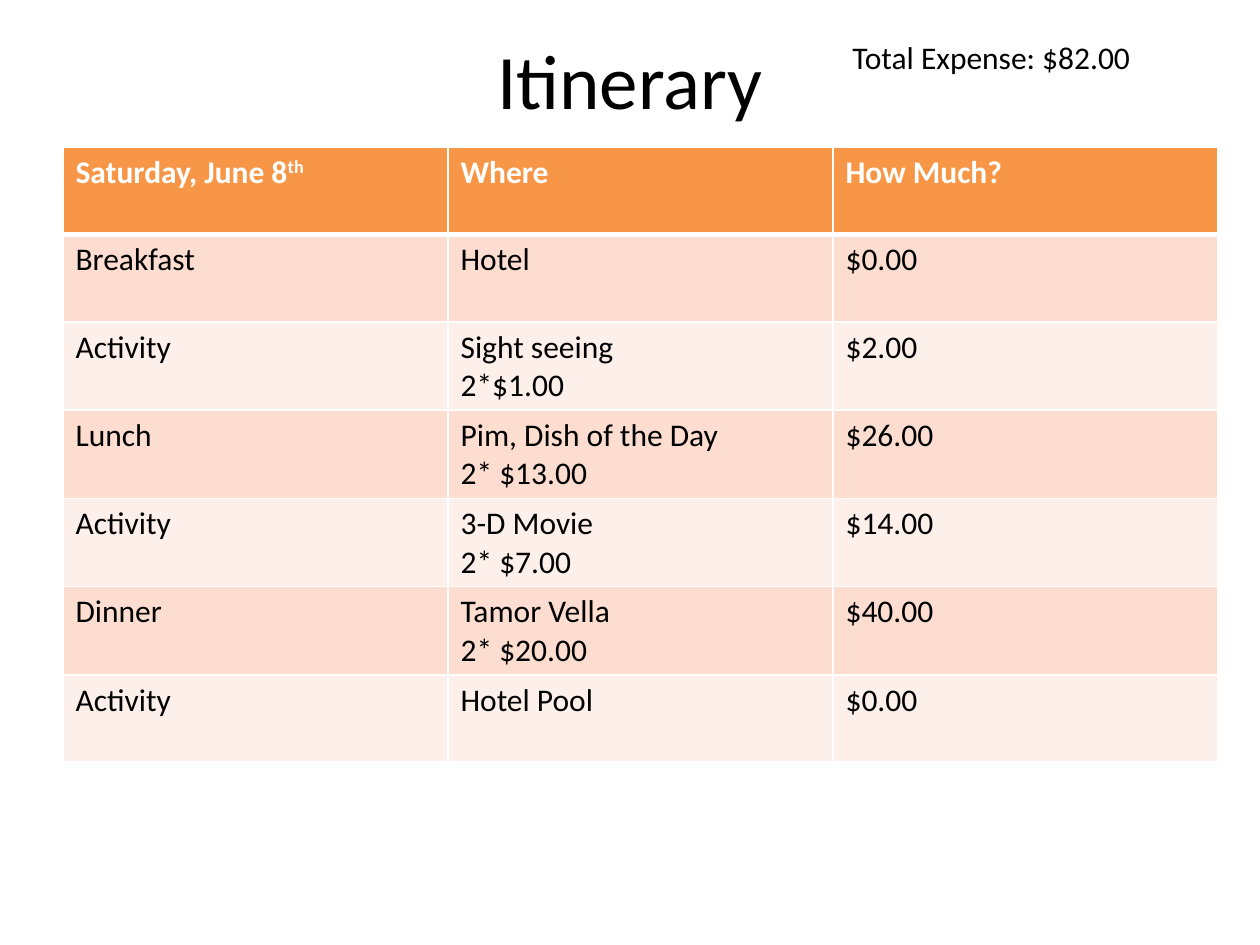
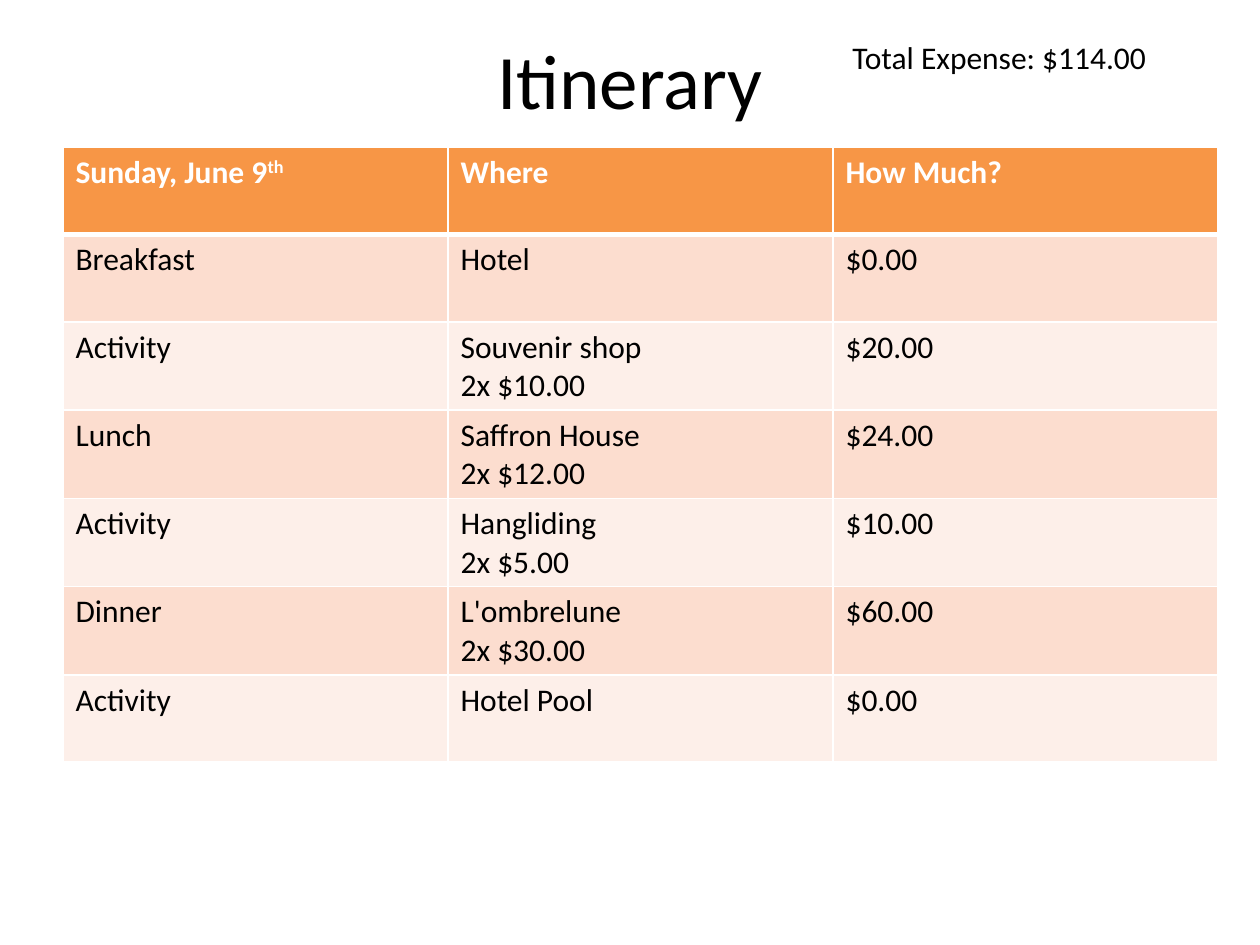
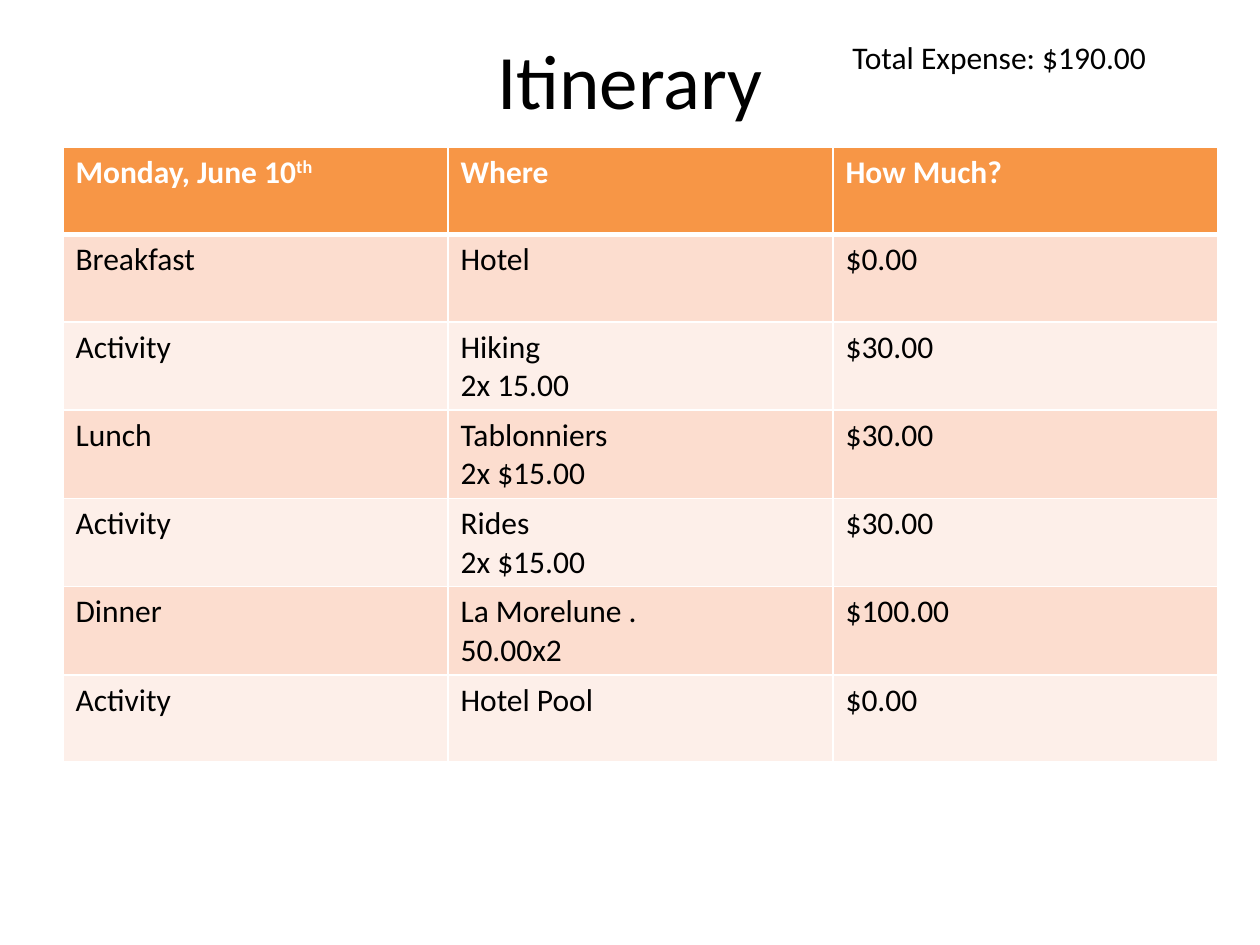
from collections import namedtuple

from lxml.etree import SubElement
from pptx import Presentation
from pptx.dml.color import RGBColor
from pptx.enum.text import MSO_ANCHOR, MSO_AUTO_SIZE, PP_ALIGN
from pptx.oxml.ns import qn
from pptx.util import Pt

EMU_PER_PX = 914400 / 126
FONT = "Calibri"
BLACK = RGBColor(0x00, 0x00, 0x00)
WHITE = RGBColor(0xFF, 0xFF, 0xFF)
ORANGE = RGBColor(0xF7, 0x96, 0x46)
PEACH = RGBColor(0xFC, 0xDD, 0xCF)
PALE_PEACH = RGBColor(0xFD, 0xEF, 0xE9)

Box = namedtuple("Box", "left top width height")
Day = namedtuple("Day", "date places costs")

HEADING_BOX = Box(63, 0, 1134, 158)
PLAN_BOX = Box(63, 147, 1155, 612)
SLOTS = ["Breakfast", "Activity", "Lunch", "Activity", "Dinner", "Activity"]
DAYS = [
    Day("Saturday, June 8",
        ["Hotel", "Sight seeing\n2*$1.00", "Pim, Dish of the Day\n2* $13.00",
         "3-D Movie\n2* $7.00", "Tamor Vella\n2* $20.00", "Hotel Pool"],
        [0, 2, 26, 14, 40, 0]),
    Day("Sunday, June 9",
        ["Hotel", "Souvenir shop\n2x $10.00", "Saffron House\n2x $12.00",
         "Hangliding\n2x $5.00", "L'ombrelune\n2x $30.00", "Hotel Pool"],
        [0, 20, 24, 10, 60, 0]),
    Day("Monday, June 10",
        ["Hotel", "Hiking\n2x 15.00", "Tablonniers\n2x $15.00",
         "Rides\n2x $15.00", "La Morelune .\n50.00x2", "Hotel Pool"],
        [0, 30, 30, 30, 100, 0]),
]


def px(length):
    return round(length * EMU_PER_PX)


def dollars(amount):
    return f"${amount:.2f}"


def write(frame, text, size=18, color=BLACK, bold=False, align=PP_ALIGN.LEFT):
    """Fill a text frame, one paragraph for each line of text."""
    frame.text = text
    for paragraph in frame.paragraphs:
        paragraph.alignment = align
        font = paragraph.font
        font.name, font.size, font.bold = FONT, Pt(size), bold
        font.color.rgb = color


def add_text(slide, box):
    frame = slide.shapes.add_textbox(*map(px, box)).text_frame
    frame.word_wrap = True
    return frame


def add_heading(slide, box, total):
    title = add_text(slide, box)
    title.vertical_anchor = MSO_ANCHOR.MIDDLE
    write(title, "Itinerary", size=44, align=PP_ALIGN.CENTER)

    expense = add_text(slide, Box(box.left + 777, box.top + 32, 388, 50))
    expense.auto_size = MSO_AUTO_SIZE.SHAPE_TO_FIT_TEXT
    write(expense, f"Total Expense: {dollars(total)}")


def set_borders(cell, top, bottom):
    """Draw white borders; top and bottom are widths in points."""
    properties = cell._tc.get_or_add_tcPr()
    widths = {"a:lnL": 1, "a:lnR": 1, "a:lnT": top, "a:lnB": bottom}
    for position, (side, width) in enumerate(widths.items()):
        line = SubElement(properties, qn(side), w=str(Pt(width)))
        fill = SubElement(line, qn("a:solidFill"))
        SubElement(fill, qn("a:srgbClr"), val=str(WHITE))
        properties.insert(position, line)


def add_plan(slide, box, day):
    rows = [(day.date, "Where", "How Much?")]
    rows += zip(SLOTS, day.places, map(dollars, day.costs))
    table = slide.shapes.add_table(len(rows), len(rows[0]), *map(px, box)).table

    for row_index, row in enumerate(rows):
        is_header = row_index == 0
        band = ORANGE if is_header else (PALE_PEACH, PEACH)[row_index % 2]
        for column_index, text in enumerate(row):
            cell = table.cell(row_index, column_index)
            cell.fill.solid()
            cell.fill.fore_color.rgb = band
            set_borders(cell, top=3 if row_index == 1 else 1,
                        bottom=3 if is_header else 1)
            write(cell.text_frame, text, bold=is_header,
                  color=WHITE if is_header else BLACK)

    suffix = table.cell(0, 0).text_frame.paragraphs[0].add_run()
    suffix.text = "th"
    suffix._r.get_or_add_rPr().set("baseline", "30000")


def add_day_slide(deck, day):
    slide = deck.slides.add_slide(deck.slide_layouts[6])
    add_heading(slide, HEADING_BOX, sum(day.costs))
    add_plan(slide, PLAN_BOX, day)


def main():
    deck = Presentation()
    deck.slide_width, deck.slide_height = px(1260), px(945)
    for day in DAYS:
        add_day_slide(deck, day)
    deck.save("out.pptx")


if __name__ == "__main__":
    main()
